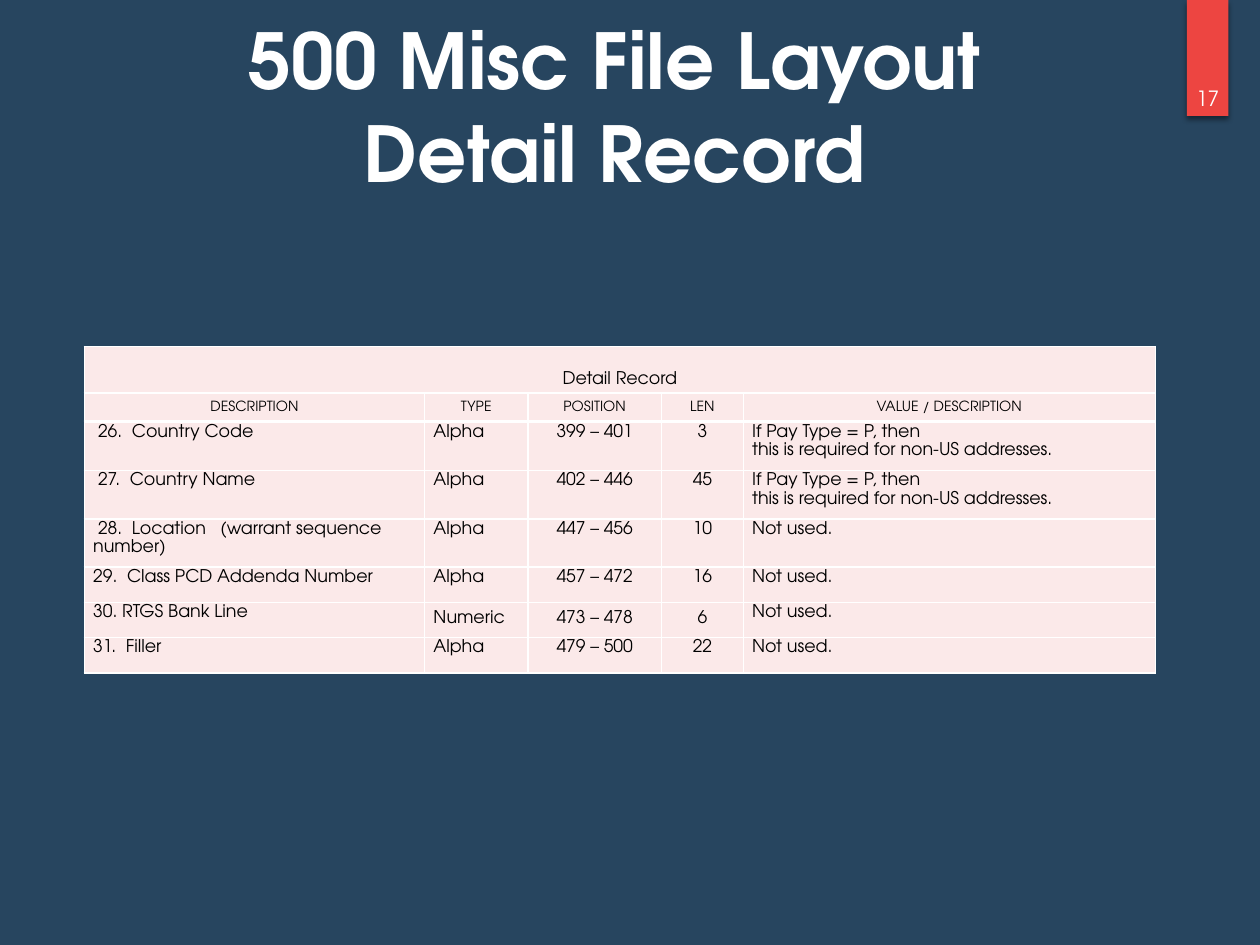
from lxml import etree
from pptx import Presentation, util as u
from pptx.dml.color import RGBColor
from pptx.enum import shapes, text
from pptx.oxml import parse_xml

FONT = "TeX Gyre Adventor"
NAVY = RGBColor(0x27, 0x45, 0x5F)
RED = RGBColor(0xED, 0x45, 0x41)
BLUSH = RGBColor(0xFB, 0xE9, 0xE9)
WHITE = RGBColor(0xFF, 0xFF, 0xFF)
BLACK = RGBColor(0, 0, 0)
DRAWING_NS = "http://schemas.openxmlformats.org/drawingml/2006/main"
LEFT, CENTER = text.PP_ALIGN.LEFT, text.PP_ALIGN.CENTER
TOP, MIDDLE, BOTTOM = text.MSO_ANCHOR.TOP, text.MSO_ANCHOR.MIDDLE, text.MSO_ANCHOR.BOTTOM

COLUMN_WIDTHS = [2.7, 0.82, 1.06, 0.65, 3.27]
COLUMN_ALIGNS = [LEFT, LEFT, CENTER, CENTER, LEFT]
HEADINGS = ["DESCRIPTION", "TYPE", "POSITION", "LEN", "VALUE / DESCRIPTION"]
REQUIRED = "If Pay Type = P, then\nthis is required for non-US addresses."
UNUSED = "Not used."
FIELDS = [
    (" 26.  Country Code", "Alpha", "399 – 401", "3", REQUIRED),
    (" 27.  Country Name", "Alpha", "402 – 446", "45", REQUIRED),
    (" 28.  Location   (warrant sequence number)", "Alpha", "447 – 456", "10", UNUSED),
    ("29.  Class PCD Addenda Number", "Alpha", "457 – 472", "16", UNUSED),
    ("30. RTGS Bank Line", "Numeric", "473 – 478", "6", UNUSED),
    ("31.  Filler", "Alpha", "479 – 500", "22", UNUSED),
]


def add_run(paragraph, words, size, color, bold=False):
    """Append one styled run to the paragraph."""
    run = paragraph.add_run()
    run.text = words
    run.font.name = FONT
    run.font.size = u.Pt(size)
    run.font.bold = bold
    run.font.color.rgb = color


def add_title(slide, left, top, width, height):
    """Place the two-line heading, centred in its box."""
    frame = slide.shapes.add_textbox(*map(u.Inches, (left, top, width, height))).text_frame
    frame.word_wrap = True
    frame.vertical_anchor = MIDDLE
    heading = frame.paragraphs[0]
    heading.alignment = CENTER
    add_run(heading, "500 Misc File Layout", 44, WHITE, bold=True)
    heading.add_line_break()
    add_run(heading, "Detail Record", 44, WHITE, bold=True)


def add_page_tab(slide, left, top, width, height):
    """Place the red tab with the page number at its foot."""
    tab = slide.shapes.add_shape(
        shapes.MSO_SHAPE.RECTANGLE, *map(u.Inches, (left, top, width, height)))
    tab.fill.solid()
    tab.fill.fore_color.rgb = RED
    tab.line.fill.background()
    tab._element.spPr.append(parse_xml(
        f'<a:effectLst xmlns:a="{DRAWING_NS}">'
        f'<a:outerShdw blurRad="{u.Pt(3)}" dist="{u.Pt(2)}" dir="5400000" rotWithShape="0">'
        '<a:srgbClr val="000000"><a:alpha val="45000"/></a:srgbClr>'
        '</a:outerShdw></a:effectLst>'))
    number = slide.shapes.add_textbox(
        *map(u.Inches, (left, top + 0.38, width, height - 0.37))).text_frame
    number.word_wrap = True
    number.margin_left = number.margin_right = 0
    number.vertical_anchor = BOTTOM
    number.paragraphs[0].alignment = CENTER
    add_run(number.paragraphs[0], "17", 12, WHITE)


def add_borders(cell):
    """Give the cell thin white borders on all sides."""
    properties = cell._tc.get_or_add_tcPr()
    for index, side in enumerate(("lnL", "lnR", "lnT", "lnB")):
        line = etree.Element(f"{{{DRAWING_NS}}}{side}", w=str(u.Pt(1)))
        fill = etree.SubElement(line, f"{{{DRAWING_NS}}}solidFill")
        etree.SubElement(fill, f"{{{DRAWING_NS}}}srgbClr", val=str(WHITE))
        properties.insert(index, line)


def fill_cell(cell, words, size, align, anchor, inset, spacing=1.15):
    """Style one table cell and write one paragraph for each line."""
    cell.fill.solid()
    cell.fill.fore_color.rgb = BLUSH
    cell.margin_left = cell.margin_right = u.Inches(inset)
    cell.margin_top = cell.margin_bottom = 0
    cell.vertical_anchor = anchor
    add_borders(cell)
    for index, line in enumerate(words.split("\n")):
        frame = cell.text_frame
        paragraph = frame.add_paragraph() if index else frame.paragraphs[0]
        paragraph.alignment = align
        paragraph.line_spacing = spacing
        add_run(paragraph, line, size, BLACK)


def add_grid(slide, left, top, row_heights):
    """Add a table with the shared columns and the given row heights."""
    table = slide.shapes.add_table(
        len(row_heights), len(COLUMN_WIDTHS), u.Inches(left), u.Inches(top),
        u.Inches(sum(COLUMN_WIDTHS)), u.Inches(sum(row_heights))).table
    for column, width in zip(table.columns, COLUMN_WIDTHS):
        column.width = u.Inches(width)
    for row, height in zip(table.rows, row_heights):
        row.height = u.Inches(height)
    return table


def add_field_table(slide, left, top):
    """Place the table of record fields."""
    table = add_grid(slide, left, top, [0.28] * len(FIELDS))
    for row, field in enumerate(FIELDS):
        for column, (words, align) in enumerate(zip(field, COLUMN_ALIGNS)):
            loose = field[1] == "Numeric" and column in (1, 2, 3)
            fill_cell(table.cell(row, column), words, 10, align, TOP, 0.07,
                      1.5 if loose else 1.15)


def add_header_table(slide, left, top):
    """Place the record caption above the column headings."""
    table = add_grid(slide, left, top, [0.37, 0.22])
    caption = table.cell(0, 0)
    caption.merge(table.cell(0, len(HEADINGS) - 1))
    fill_cell(caption, "Detail Record", 10, CENTER, BOTTOM, 0.05)
    caption.margin_bottom = u.Inches(0.04)
    for column, heading in enumerate(HEADINGS):
        fill_cell(table.cell(1, column), heading, 8, CENTER, MIDDLE, 0.05)


def main():
    """Build the slide and save it."""
    deck = Presentation()
    deck.slide_width, deck.slide_height = u.Inches(10), u.Inches(7.5)
    slide = deck.slides.add_slide(deck.slide_layouts[6])
    slide.background.fill.solid()
    slide.background.fill.fore_color.rgb = NAVY
    add_page_tab(slide, 9.42, 0, 0.33, 0.92)
    add_title(slide, 0.67, 0.17, 8.42, 1.33)
    add_field_table(slide, 0.67, 3.35)
    add_header_table(slide, 0.67, 2.75)
    deck.save("out.pptx")


if __name__ == "__main__":
    main()
